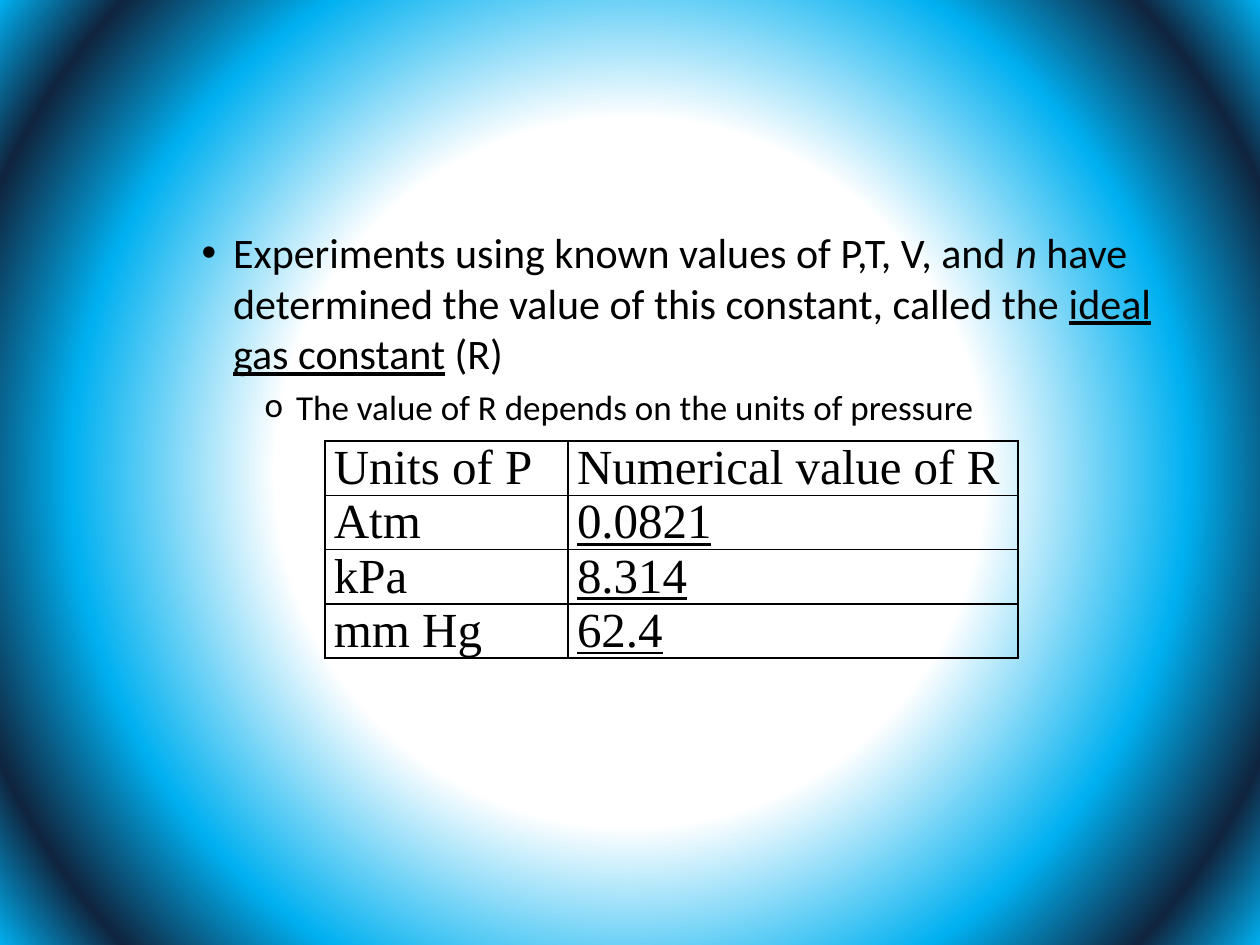
from lxml.etree import SubElement
from pptx import Presentation
from pptx.dml.color import RGBColor
from pptx.oxml import parse_xml
from pptx.oxml.ns import nsdecls, qn
from pptx.util import Inches, Pt

BLACK = "000000"


def color(hex_string):
    return RGBColor.from_string(hex_string)


def add_run(paragraph, text, font_name, size, italic=False, underline=False):
    run = paragraph.add_run()
    run.text = text
    run.font.name = font_name
    run.font.size = Pt(size)
    run.font.italic = italic
    run.font.underline = underline
    run.font.color.rgb = color(BLACK)


presentation = Presentation()
presentation.slide_width = Inches(10)
presentation.slide_height = Inches(7.5)
slide = presentation.slides.add_slide(presentation.slide_layouts[1])
title = slide.shapes.title
title.element.getparent().remove(title.element)

# Circular gradient background
stops = [(0, "FFFFFF"), (45, "FFFFFF"), (71, "00B0F0"), (88, "0F243E"), (100, "00B0F0")]
stop_xml = "".join(
    f'<a:gs pos="{position * 1000}"><a:srgbClr val="{hex_string}"/></a:gs>'
    for position, hex_string in stops
)
fill = slide.background.fill
fill.solid()
solid_fill = slide.element.cSld.find(".//" + qn("a:solidFill"))
solid_fill.getparent().replace(solid_fill, parse_xml(
    f'<a:gradFill {nsdecls("a")} rotWithShape="1"><a:gsLst>{stop_xml}</a:gsLst>'
    '<a:path path="circle"><a:fillToRect l="50000" t="50000" r="50000" b="50000"/></a:path>'
    "</a:gradFill>"
))

# Bulleted text: level, bullet, bullet font, size, runs of (text, italic, underline)
bullets = [
    (2, "•", "Arial", 24, [
        ("Experiments using known values of P,T, V, and ", False, False),
        ("n", True, False),
        (" have determined the value of this constant, called the ", False, False),
        ("ideal gas constant", False, True),
        (" (R)", False, False),
    ]),
    (3, "o", "Calibri", 20, [
        ("The value of R depends on the units of pressure", False, False),
    ]),
]
body = slide.placeholders[1]
body.left, body.top = Inches(0.5), Inches(1.75)
body.width, body.height = Inches(9), Inches(4.95)
text_frame = body.text_frame
for index, (level, bullet, bullet_font, size, runs) in enumerate(bullets):
    paragraph = text_frame.add_paragraph() if index else text_frame.paragraphs[0]
    paragraph.level = level
    properties = paragraph._p.get_or_add_pPr()
    SubElement(properties, qn("a:buFont")).set("typeface", bullet_font)
    SubElement(properties, qn("a:buChar")).set("char", bullet)
    for text, italic, underline in runs:
        add_run(paragraph, text, "Calibri", size, italic, underline)

# Table of gas constants
rows = [
    ("Units of P", "Numerical value of R"),
    ("Atm", "0.0821"),
    ("kPa", "8.314"),
    ("mm Hg", "62.4"),
]
row_height = 0.43
table = slide.shapes.add_table(
    len(rows), 2, Inches(2.58), Inches(3.5), Inches(5.5), Inches(row_height * len(rows))
).table
table.first_row = False
table.horz_banding = False
for column, width in zip(table.columns, (1.93, 3.57)):
    column.width = Inches(width)

for row_index, values in enumerate(rows):
    table.rows[row_index].height = Inches(row_height)
    for column_index, value in enumerate(values):
        cell = table.cell(row_index, column_index)
        cell.margin_left = cell.margin_right = Inches(0.07)
        cell.margin_top = cell.margin_bottom = 0
        is_constant = row_index > 0 and column_index == 1
        add_run(cell.text_frame.paragraphs[0], value, "Times New Roman", 28,
                underline=is_constant)
        # Borders come before the fill in the cell properties
        cell_properties = cell._tc.get_or_add_tcPr()
        for side in ("lnL", "lnR", "lnT", "lnB"):
            cell_properties.append(parse_xml(
                f'<a:{side} {nsdecls("a")} w="{Pt(1)}"><a:solidFill>'
                f'<a:srgbClr val="{BLACK}"/></a:solidFill></a:{side}>'
            ))
        cell.fill.background()

presentation.save("out.pptx")
